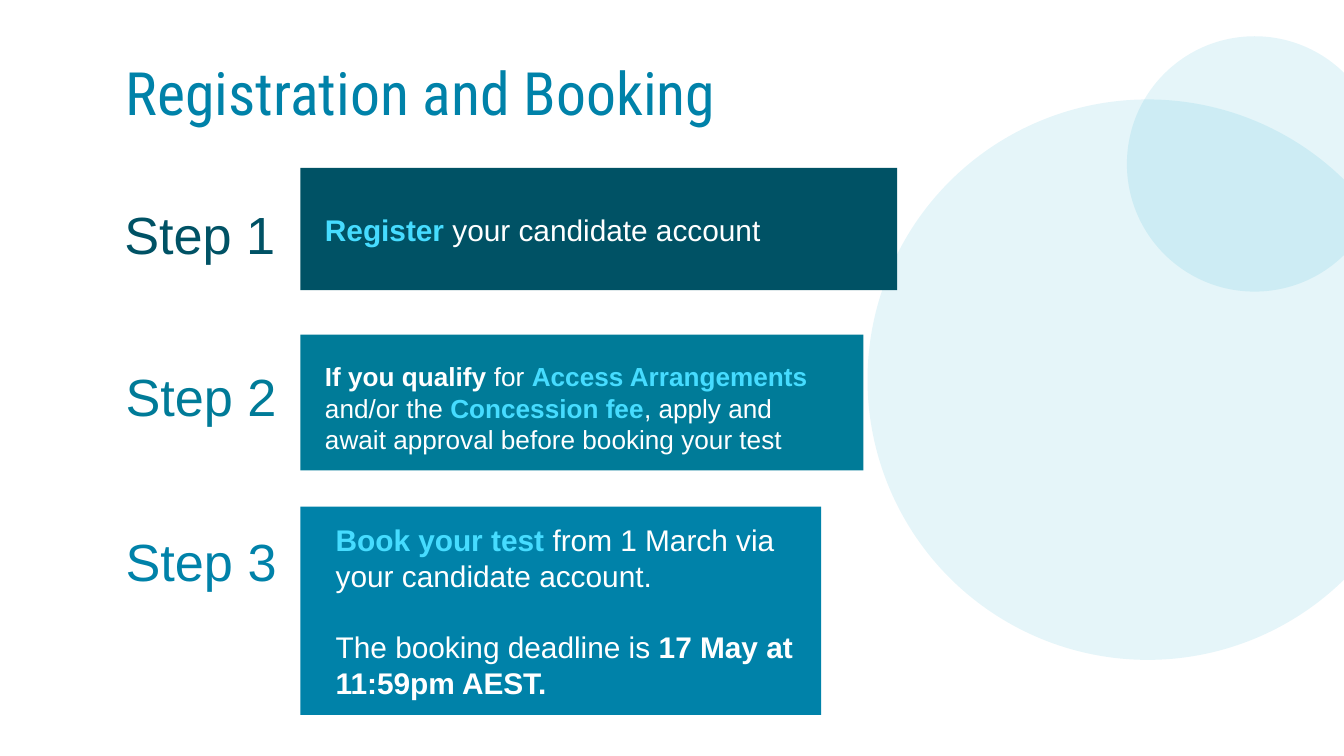
from dataclasses import dataclass

from lxml import etree
from pptx import Presentation
from pptx import util as u
from pptx.dml.color import RGBColor
from pptx.enum import shapes, text
from pptx.oxml.ns import qn

PX = 4572  # EMU in one px, 200 px to the inch
HUES = {
    "dark": "005265",
    "teal": "007B98",
    "blue": "0082A9",
    "pale": "00A4CA",
    "cyan": "46DCFF",
    "white": "FFFFFF",
}


@dataclass(frozen=True)
class Box:
    left: int
    top: int
    width: int
    height: int

    def emu(self) -> list[int]:
        return [n * PX for n in (self.left, self.top, self.width, self.height)]


@dataclass(frozen=True)
class Run:
    words: str
    hue: str = "white"
    bold: bool = False


@dataclass(frozen=True)
class Step:
    name: str
    hue: str
    label: Box
    bar: Box
    body: Box
    size: int
    paras: list[list[Run]]


CIRCLES = [Box(1291, 148, 834, 834), Box(1677, 54, 380, 380)]
STEPS = [
    Step("Step 1", "dark", Box(185, 270, 278, 166), Box(447, 250, 888, 182),
         Box(464, 273, 820, 138), 16,
         [[Run("Register", "cyan", True), Run(" your candidate account")]]),
    Step("Step 2", "teal", Box(187, 526, 288, 138), Box(447, 498, 838, 202),
         Box(464, 533, 806, 148), 14,
         [[Run("If you qualify ", bold=True), Run("for "),
           Run("Access Arrangements ", "cyan", True), Run("and/or the "),
           Run("Concession fee", "cyan", True),
           Run(", apply and await approval before booking your test")]]),
    Step("Step 3", "blue", Box(187, 771, 284, 138), Box(447, 754, 775, 310),
         Box(480, 840, 734, 138), 16,
         [[Run("Book your test ", "cyan", True),
           Run("from 1 March via your candidate account.")],
          [Run("The booking deadline is "),
           Run("17 May at 11:59pm AEST.", bold=True)]]),
]


def draw(slide, kind: int, box: Box, hue: str, alpha: int = 100) -> None:
    """Add a plain filled shape; alpha is its opacity in percent."""
    shape = slide.shapes.add_shape(kind, *box.emu())
    shape.shadow.inherit = False
    shape.line.fill.background()
    shape.fill.solid()
    shape.fill.fore_color.rgb = RGBColor.from_string(HUES[hue])
    if alpha < 100:
        tint = shape.fill._xPr.find(".//" + qn("a:srgbClr"))
        etree.SubElement(tint, qn("a:alpha"), val=str(alpha * 1000))


def write(slide, box: Box, paras: list[list[Run]], size: int,
          face: str = "Arial", inset: tuple[int, int] = (0, 0),
          lines: float = 1.0) -> None:
    """Add a text box, its paragraphs set one blank line apart."""
    frame = slide.shapes.add_textbox(*box.emu()).text_frame
    frame.word_wrap = True
    frame.vertical_anchor = text.MSO_ANCHOR.MIDDLE
    frame.margin_left = frame.margin_right = inset[0] * PX
    frame.margin_top = frame.margin_bottom = inset[1] * PX
    for i, runs in enumerate(paras):
        para = frame.add_paragraph() if i else frame.paragraphs[0]
        para.line_spacing = lines
        if i:
            para.space_before = u.Pt(size * 1.18)
        for item in runs:
            run = para.add_run()
            run.text = item.words
            run.font.name = face
            run.font.size = u.Pt(size)
            run.font.bold = item.bold
            run.font.color.rgb = RGBColor.from_string(HUES[item.hue])


def main() -> None:
    deck = Presentation()
    deck.slide_width, deck.slide_height = 2000 * PX, 1125 * PX
    slide = deck.slides.add_slide(deck.slide_layouts[6])
    for box in CIRCLES:
        draw(slide, shapes.MSO_SHAPE.OVAL, box, "pale", 10)
    write(slide, Box(187, 61, 1444, 164), [[Run("Registration and Booking", "blue")]],
          32, "Roboto Condensed", lines=0.9)
    for step in STEPS:
        write(slide, step.label, [[Run(step.name, step.hue)]], 28, lines=0.9)
        draw(slide, shapes.MSO_SHAPE.RECTANGLE, step.bar, step.hue)
        write(slide, step.body, step.paras, step.size, inset=(20, 10))
    deck.save("out.pptx")


if __name__ == "__main__":
    main()
